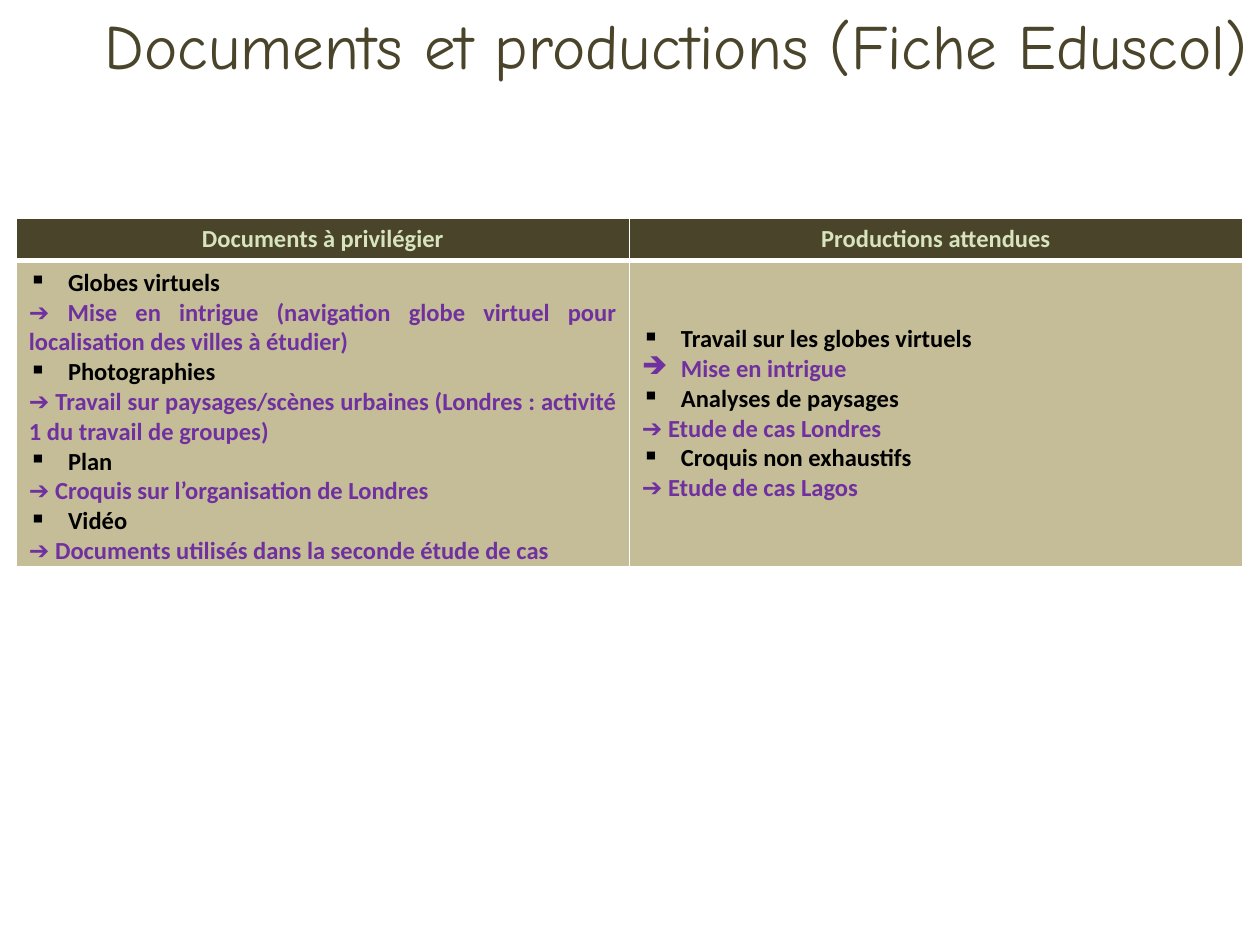
"""Build the slide on recommended documents and expected student work."""
from dataclasses import dataclass

from lxml import etree
from pptx import Presentation
from pptx.dml.color import RGBColor
from pptx.enum.text import MSO_ANCHOR, MSO_AUTO_SIZE, PP_ALIGN
from pptx.oxml.ns import qn
from pptx.util import Inches, Pt

LEFT_RIGHT, CENTER, RIGHT = PP_ALIGN.JUSTIFY, PP_ALIGN.CENTER, PP_ALIGN.RIGHT
TOP, MIDDLE = MSO_ANCHOR.TOP, MSO_ANCHOR.MIDDLE
NO_AUTOFIT = MSO_AUTO_SIZE.NONE
DARK, PALE_GREEN, SAND = "4A452A", "D7E4BD", "C4BD97"
WHITE, BLACK, PURPLE = "FFFFFF", "000000", "7030A0"
INDENT = Inches(0.31)


@dataclass
class Entry:
    text: str
    color: str = BLACK
    bullet: str = "▪"


@dataclass
class Column:
    heading: str
    entries: list[Entry]
    bottom_margin: float


def comment(text: str) -> Entry:
    return Entry(f"➔ {text}", PURPLE, "")


COLUMNS = [
    Column("Documents à privilégier", [
        Entry("Globes virtuels"),
        comment("Mise en intrigue (navigation globe virtuel pour localisation des villes à étudier)"),
        Entry("Photographies"),
        comment("Travail sur paysages/scènes urbaines (Londres : activité 1 du travail de groupes)"),
        Entry("Plan"),
        comment("Croquis sur l’organisation de Londres"),
        Entry("Vidéo"),
        comment("Documents utilisés dans la seconde étude de cas"),
    ], 0),
    Column("Productions attendues", [
        Entry("Travail sur les globes virtuels"),
        Entry("Mise en intrigue", PURPLE, "➔"),
        Entry("Analyses de paysages"),
        comment("Etude de cas Londres"),
        Entry("Croquis non exhaustifs"),
        comment("Etude de cas Lagos"),
    ], 0.05),
]


def rgb(color: str) -> RGBColor:
    return RGBColor.from_string(color)


def write(paragraph, text: str, *, color: str, size: int = 14, font: str = "Calibri",
          bold: bool = True, align=LEFT_RIGHT, bullet: str = "") -> None:
    paragraph.alignment = align
    if bullet:
        properties = paragraph._p.get_or_add_pPr()
        properties.set("marL", str(INDENT))
        properties.set("indent", str(-INDENT))
        etree.SubElement(properties, qn("a:buChar"), char=bullet)
    run = paragraph.add_run()
    run.text = text
    run.font.name, run.font.size, run.font.bold = font, Pt(size), bold
    run.font.color.rgb = rgb(color)


def format_cell(cell, fill: str, *, top: int = 1, bottom: int = 1) -> None:
    properties = cell._tc.get_or_add_tcPr()
    for side, width in (("L", 1), ("R", 1), ("T", top), ("B", bottom)):
        line = etree.SubElement(properties, qn(f"a:ln{side}"), w=str(Pt(width)))
        solid = etree.SubElement(line, qn("a:solidFill"))
        etree.SubElement(solid, qn("a:srgbClr"), val=WHITE)
    cell.fill.solid()
    cell.fill.fore_color.rgb = rgb(fill)


def add_title(slide, text: str) -> None:
    title = slide.shapes.title
    title.left, title.top = Inches(0), Inches(0)
    title.width, title.height = Inches(10), Inches(1.31)
    frame = title.text_frame
    frame.word_wrap, frame.auto_size, frame.vertical_anchor = True, NO_AUTOFIT, TOP
    write(frame.paragraphs[0], text, color=DARK, size=36, font="Comic Neue",
          bold=False, align=RIGHT)


def add_columns(slide, columns: list[Column]) -> None:
    table = slide.shapes.add_table(2, len(columns), Inches(0.13), Inches(1.73),
                                   Inches(9.73), Inches(2.77)).table
    table.rows[0].height, table.rows[1].height = Inches(0.34), Inches(2.43)
    for index, column in enumerate(columns):
        header, body = table.cell(0, index), table.cell(1, index)
        format_cell(header, DARK, bottom=3)
        write(header.text_frame.paragraphs[0], column.heading, color=PALE_GREEN, align=CENTER)
        format_cell(body, SAND, top=3)
        body.vertical_anchor = MIDDLE
        body.margin_bottom = Inches(column.bottom_margin)
        frame = body.text_frame
        for position, entry in enumerate(column.entries):
            paragraph = frame.add_paragraph() if position else frame.paragraphs[0]
            write(paragraph, entry.text, color=entry.color, bullet=entry.bullet)


def main() -> None:
    presentation = Presentation()
    presentation.slide_width, presentation.slide_height = Inches(10), Inches(7.5)
    slide = presentation.slides.add_slide(presentation.slide_layouts[5])
    add_title(slide, "Documents et productions (Fiche Eduscol)")
    add_columns(slide, COLUMNS)
    presentation.save("out.pptx")


if __name__ == "__main__":
    main()
